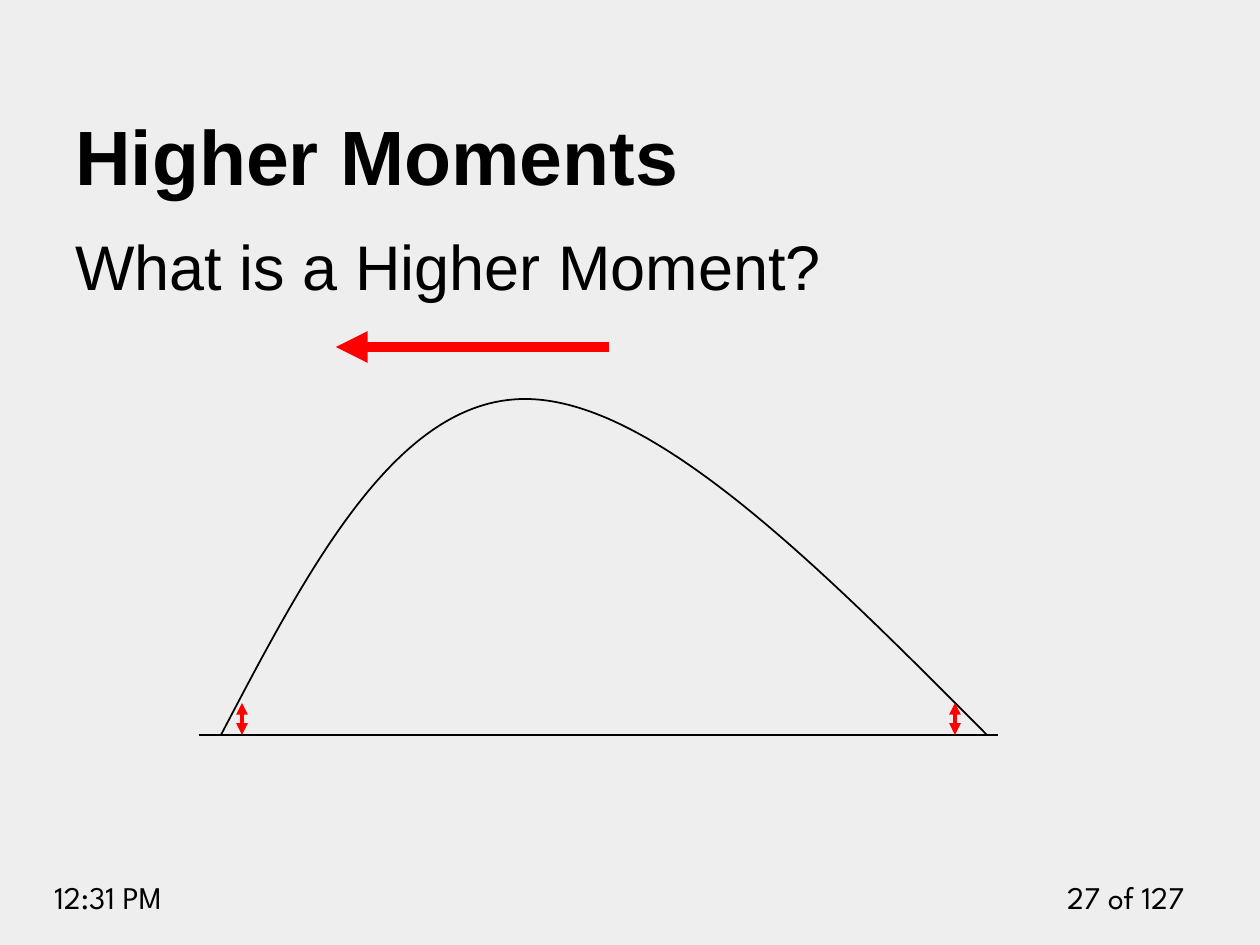
import lxml.etree
import pptx
import pptx.dml.color
import pptx.enum.shapes
import pptx.enum.text
import pptx.oxml.ns
import pptx.util

EMU_PER_PX = 914400 / 126
COLORS = {"background": "EEEEEE", "ink": "000000", "accent": "FF0000"}
ANCHOR = pptx.enum.text.MSO_ANCHOR
ALIGN = pptx.enum.text.PP_ALIGN

TITLE_FONT = {"name": "Arial", "size": pptx.util.Pt(44), "bold": True}
BODY_FONT = {"name": "Arial", "size": pptx.util.Pt(36)}
FOOTER_FONT = {"name": "League Spartan", "size": pptx.util.Pt(18)}

BASE_Y = 735
PEAK_Y = 399
MID_Y = (BASE_Y + PEAK_Y) // 2
CURVE_START = (221, BASE_Y)
CURVE_CONTROLS = [
    (309, MID_Y), (397, PEAK_Y), (525, PEAK_Y),
    (653, PEAK_Y), (820, MID_Y), (987, BASE_Y),
]
TAIL_XS = (242, 955)
TAIL_HEIGHT = 32


def px(value):
    return pptx.util.Emu(round(value * EMU_PER_PX))


def rgb(name):
    return pptx.dml.color.RGBColor.from_string(COLORS[name])


def set_attributes(target, values):
    for name, value in values.items():
        setattr(target, name, value)


def add_text(slide, text, box, font, anchor=ANCHOR.TOP, align=ALIGN.LEFT):
    frame = slide.shapes.add_textbox(*map(px, box)).text_frame
    set_attributes(frame, {"word_wrap": True, "vertical_anchor": anchor})
    paragraph = frame.paragraphs[0]
    set_attributes(paragraph, {"text": text, "alignment": align})
    run = paragraph.runs[0]
    set_attributes(run.font, font)
    run.font.color.rgb = rgb("ink")


def style_line(shape, color, width):
    shape.line.color.rgb = rgb(color)
    shape.line.width = pptx.util.Pt(width)


def add_line(slide, start, end, color, width, arrowheads=()):
    """Draw a straight line; arrowheads lists headEnd (start) and tailEnd (end)."""
    connector = slide.shapes.add_connector(
        pptx.enum.shapes.MSO_CONNECTOR.STRAIGHT, *map(px, start + end)
    )
    style_line(connector, color, width)
    line_xml = connector.line._get_or_add_ln()
    for arrowhead in arrowheads:
        lxml.etree.SubElement(
            line_xml, pptx.oxml.ns.qn(f"a:{arrowhead}"), type="triangle"
        )
    lxml.etree.SubElement(
        connector._element.spPr, pptx.oxml.ns.qn("a:effectLst")
    )


def add_curve(slide, start, controls, color, width):
    """Draw an open outline whose points, three at a time, are Bezier controls."""
    builder = slide.shapes.build_freeform(*start, scale=EMU_PER_PX)
    builder.add_line_segments(controls, close=False)
    curve = builder.convert_to_shape()
    curve.shadow.inherit = False
    curve.fill.background()
    style_line(curve, color, width)

    segments = list(curve._element.iter(pptx.oxml.ns.qn("a:lnTo")))
    path = segments[0].getparent()
    for first in range(0, len(segments), 3):
        bezier = lxml.etree.SubElement(path, pptx.oxml.ns.qn("a:cubicBezTo"))
        for segment in segments[first:first + 3]:
            bezier.append(segment[0])
            path.remove(segment)


def main():
    presentation = pptx.Presentation()
    presentation.slide_width = px(1260)
    presentation.slide_height = px(945)
    slide = presentation.slides.add_slide(presentation.slide_layouts[6])
    slide.background.fill.solid()
    slide.background.fill.fore_color.rgb = rgb("background")

    add_text(slide, "27 of 127", (977, 872, 220, 50), FOOTER_FONT, align=ALIGN.RIGHT)
    add_text(slide, "12:31 PM", (42, 872, 199, 50), FOOTER_FONT)
    add_text(slide, "Higher Moments", (63, 49, 1134, 158), TITLE_FONT, ANCHOR.BOTTOM)
    add_text(slide, "What is a Higher Moment?", (63, 221, 1134, 624), BODY_FONT)

    add_line(slide, (199, BASE_Y), (998, BASE_Y), "ink", 1)
    add_curve(slide, CURVE_START, CURVE_CONTROLS, "ink", 1)
    add_line(slide, (609, 347), (336, 347), "accent", 6, ["tailEnd"])
    for x in TAIL_XS:
        add_line(slide, (x, BASE_Y - TAIL_HEIGHT), (x, BASE_Y), "accent", 2.25,
                 ["headEnd", "tailEnd"])

    presentation.save("out.pptx")


if __name__ == "__main__":
    main()
